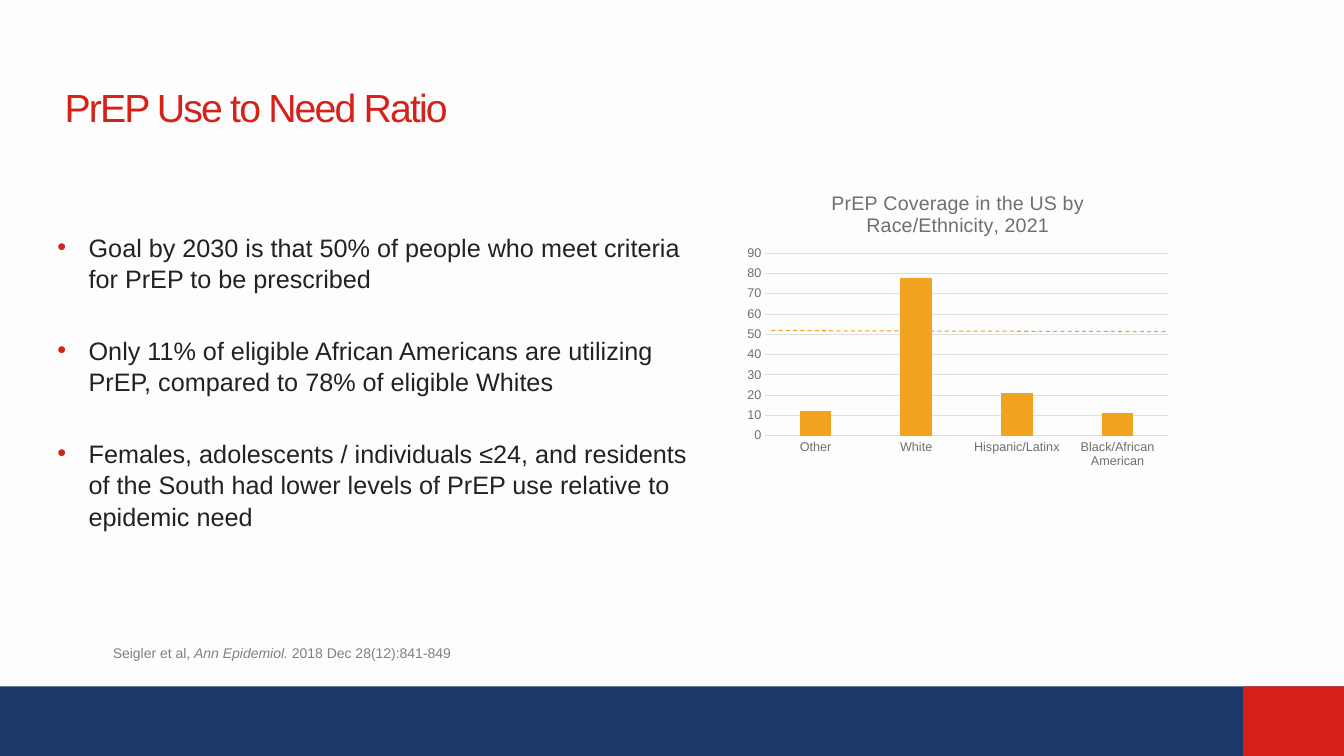
from lxml import etree
from pptx import Presentation
from pptx import util as u
from pptx.chart.data import CategoryChartData
from pptx.dml.color import RGBColor
from pptx.enum import chart as charts, dml, shapes, text
from pptx.oxml import parse_xml
from pptx.oxml.ns import nsdecls, qn

WIDTH, HEIGHT = 13.33, 7.5
NAVY, RED, ORANGE = "1C3768", "D6201A", "F1A21F"
INK, GRAY, PALE, CITATION = "222222", "6F6F6F", "DEDEDE", "808080"
FONT = "Arial"
BAND_TOP, BAND_HEIGHT = 6.81, 0.69

GOALS = [
    "Goal by 2030 is that 50% of people who meet criteria for PrEP to be prescribed",
    "Only 11% of eligible African Americans are utilizing PrEP, compared to 78% of eligible Whites",
    "Females, adolescents / individuals ≤24, and residents of the South had lower levels of PrEP use "
    "relative to epidemic need",
]
COVERAGE = {"Other": 12, "White": 78, "Hispanic/Latinx": 21, "Black/African American": 11}
PLOT_AREA = {"x": 0.06, "y": 0.26, "w": 0.92, "h": 0.61}


def color(value):
    return RGBColor.from_string(value)


def inches(*lengths):
    return [u.Inches(length) for length in lengths]


def set_values(target, values):
    for name, value in values.items():
        setattr(target, name, value)


def style_font(font, size, tint, **values):
    set_values(font, {"name": FONT, "size": u.Pt(size), "bold": False, **values})
    font.color.rgb = color(tint)


def style_line(line, tint):
    line.color.rgb = color(tint)
    line.width = u.Pt(0.75)


def add_band(page, left, width, tint):
    band = page.shapes.add_shape(
        shapes.MSO_SHAPE.RECTANGLE, *inches(left, BAND_TOP, width, BAND_HEIGHT))
    band.shadow.inherit = False
    band.fill.solid()
    band.fill.fore_color.rgb = color(tint)
    band.line.fill.background()


def add_text(page, place, inset=(0.13, 0.07), anchor=text.MSO_ANCHOR.TOP):
    frame = page.shapes.add_textbox(*inches(*place)).text_frame
    side, edge = inches(*inset)
    set_values(frame, {"word_wrap": True, "vertical_anchor": anchor,
                       "margin_left": side, "margin_right": side,
                       "margin_top": edge, "margin_bottom": edge})
    return frame


def add_span(para, words, size, tint, **values):
    span = para.add_run()
    span.text = words
    style_font(span.font, size, tint, **values)
    return span


def add_bullet(para, indent):
    props = para._p.get_or_add_pPr()
    props.set("marL", str(u.Inches(indent)))
    props.set("indent", str(-u.Inches(indent)))
    tint = etree.SubElement(props, qn("a:buClr"))
    etree.SubElement(tint, qn("a:srgbClr"), val=RED)
    etree.SubElement(props, qn("a:buFont"), typeface=FONT)
    etree.SubElement(props, qn("a:buChar"), char="•")


def add_goals(page):
    frame = add_text(page, (0.44, 2.22, 6.64, 2.33))
    for number, goal in enumerate(GOALS):
        para = frame.paragraphs[0] if number == 0 else frame.add_paragraph()
        para.line_spacing = 1.04
        if number:
            para.space_before = u.Pt(28.7)
        add_bullet(para, 0.31)
        add_span(para, goal, 18, INK)


def place_plot(chart):
    """Fix the inner plot area as shares of the chart."""
    area = chart._chartSpace.chart.plotArea
    for old in area.findall(qn("c:layout")):
        area.remove(old)
    sizes = "".join(f'<c:{side} val="{share}"/>' for side, share in PLOT_AREA.items())
    area.insert(0, parse_xml(
        f'<c:layout {nsdecls("c")}><c:manualLayout><c:layoutTarget val="inner"/>'
        f'<c:xMode val="edge"/><c:yMode val="edge"/>{sizes}</c:manualLayout></c:layout>'))


def add_coverage_chart(page):
    data = CategoryChartData()
    data.categories = list(COVERAGE)
    data.add_series("Series 1", list(COVERAGE.values()))
    chart = page.shapes.add_chart(
        charts.XL_CHART_TYPE.COLUMN_CLUSTERED, *inches(7.33, 1.74, 4.34, 2.97), data).chart
    style_font(chart.font, 10, INK)
    set_values(chart, {"has_legend": False, "has_title": True})
    add_span(chart.chart_title.text_frame.paragraphs[0],
             "PrEP Coverage in the US by Race/Ethnicity, 2021", 14, GRAY)
    chart.chart_title.include_in_layout = False

    plot = chart.plots[0]
    set_values(plot, {"gap_width": 219, "overlap": -27, "vary_by_categories": False})
    columns = plot.series[0].format.fill
    columns.solid()
    columns.fore_color.rgb = color(ORANGE)

    for axis in (chart.category_axis, chart.value_axis):
        axis.major_tick_mark = axis.minor_tick_mark = charts.XL_TICK_MARK.NONE
        style_font(axis.tick_labels.font, 9, GRAY)
    style_line(chart.category_axis.format.line, PALE)
    values = chart.value_axis
    set_values(values, {"minimum_scale": 0, "maximum_scale": 90, "major_unit": 10})
    values.format.line.fill.background()
    style_line(values.major_gridlines.format.line, PALE)
    place_plot(chart)


def add_goal_line(page):
    goal = page.shapes.add_connector(
        shapes.MSO_CONNECTOR.STRAIGHT, *inches(7.65, 3.28, 11.56, 3.29))
    style_line(goal.line, ORANGE)
    goal.line.dash_style = dml.MSO_LINE.DASH
    etree.SubElement(goal._element.spPr, qn("a:effectLst"))


def main():
    deck = Presentation()
    deck.slide_width, deck.slide_height = inches(WIDTH, HEIGHT)
    page = deck.slides.add_slide(deck.slide_layouts[6])
    page.background.fill.solid()
    page.background.fill.fore_color.rgb = color("FDFDFD")

    add_band(page, 0, WIDTH, NAVY)
    add_band(page, WIDTH - 1, 1, RED)

    heading = add_text(page, (0.51, 0.53, 12.12, 1.06), anchor=text.MSO_ANCHOR.MIDDLE)
    span = add_span(heading.paragraphs[0], "PrEP Use to Need Ratio", 28, RED)
    span._r.get_or_add_rPr().set("spc", "-130")

    add_goals(page)
    add_coverage_chart(page)

    citation = add_text(page, (1.02, 6.34, 8.92, 0.27), inset=(0.1, 0.05)).paragraphs[0]
    for words, italic in (("Seigler et al, ", False), ("Ann Epidemiol. ", True),
                          ("2018 Dec 28(12):841-849", False)):
        add_span(citation, words, 10, CITATION, italic=italic)
    add_goal_line(page)
    deck.save("out.pptx")


if __name__ == "__main__":
    main()
